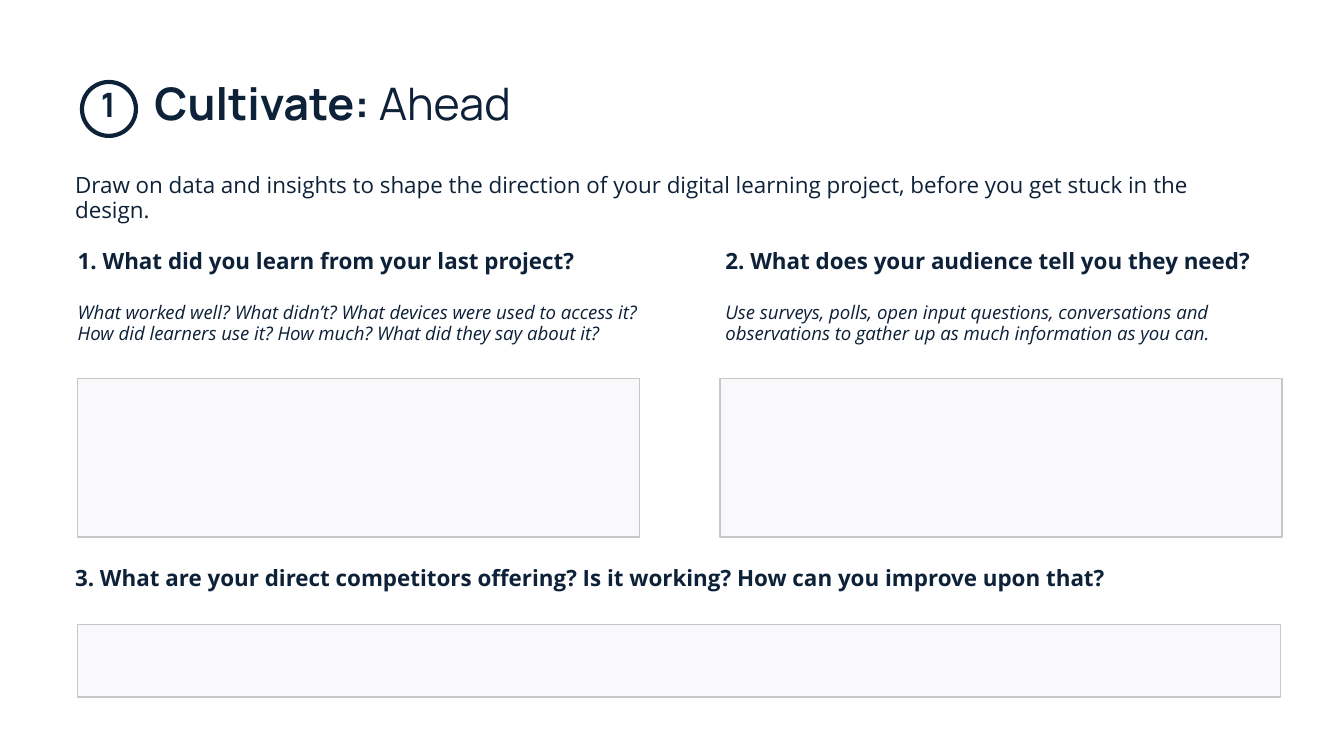
from dataclasses import dataclass

from pptx import Presentation
from pptx.dml.color import RGBColor
from pptx.enum.shapes import MSO_SHAPE
from pptx.enum.text import PP_ALIGN
from pptx.util import Cm, Pt

INK = "0D2139"
PANEL_FILL = "F9F9FB"
PANEL_LINE = "C7C7C7"

TITLE = {"name": "Manrope", "size": Pt(24), "bold": True}
TITLE_LIGHT = {**TITLE, "bold": False}
NUMERAL = {**TITLE, "size": Pt(18)}
BODY = {"name": "Open Sans", "size": Pt(12), "bold": False}
QUESTION = {**BODY, "bold": True}
HINT = {**BODY, "size": Pt(10), "italic": True}


@dataclass
class Box:
    left: float
    top: float
    width: float
    height: float

    def lengths(self) -> list:
        return [Cm(value) for value in (self.left, self.top, self.width, self.height)]


@dataclass
class Run:
    text: str
    font: dict


def color(value: str) -> RGBColor:
    return RGBColor.from_string(value)


def add_text(slide, box: Box, paragraphs: list[list[Run]], alignment=PP_ALIGN.LEFT) -> None:
    frame = slide.shapes.add_textbox(*box.lengths()).text_frame
    frame.word_wrap = True
    for side in ("left", "top", "right", "bottom"):
        setattr(frame, f"margin_{side}", Cm(0.25))
    for index, runs in enumerate(paragraphs):
        paragraph = frame.add_paragraph() if index else frame.paragraphs[0]
        paragraph.alignment = alignment
        paragraph.line_spacing = 0.9
        paragraph.space_before = Pt(16 if index else 0)
        for item in runs:
            run = paragraph.add_run()
            run.text = item.text
            run.font.color.rgb = color(INK)
            for attribute, value in item.font.items():
                setattr(run.font, attribute, value)


def add_outline(slide, kind: MSO_SHAPE, box: Box, line: str, weight: float, fill: str = "") -> None:
    shape = slide.shapes.add_shape(kind, *box.lengths())
    shape.shadow.inherit = False
    shape.line.color.rgb = color(line)
    shape.line.width = Pt(weight)
    if fill:
        shape.fill.solid()
        shape.fill.fore_color.rgb = color(fill)
    else:
        shape.fill.background()


def main() -> None:
    presentation = Presentation()
    presentation.slide_width = Cm(25.4)
    presentation.slide_height = Cm(14.29)
    slide = presentation.slides.add_slide(presentation.slide_layouts[6])

    # Title with numbered circle
    add_text(slide, Box(2.67, 1.3, 15.52, 1.55),
             [[Run("Cultivate: ", TITLE), Run("Ahead", TITLE_LIGHT)]])
    add_outline(slide, MSO_SHAPE.OVAL, Box(1.55, 1.55, 1.02, 1.02), INK, 2.25)
    add_text(slide, Box(1.65, 1.42, 0.79, 1.02), [[Run("1", NUMERAL)]], PP_ALIGN.CENTER)

    # Introduction
    add_text(slide, Box(1.17, 3.05, 23.04, 1.5), [[Run(
        "Draw on data and insights to shape the direction of your digital learning project, "
        "before you get stuck in the design.", BODY)]])

    # Questions 1 and 2
    columns = [
        (1.22, "1. What did you learn from your last project?",
         "What worked well? What didn’t? What devices were used to access it? "
         "How did learners use it? How much? What did they say about it?"),
        (13.46, "2. What does your audience tell you they need?",
         "Use surveys, polls, open input questions, conversations and "
         "observations to gather up as much information as you can."),
    ]
    for left, question, hint in columns:
        add_text(slide, Box(left, 4.47, 11.13, 2.6),
                 [[Run(question, QUESTION)], [Run(hint, HINT)]])

    # Question 3
    add_text(slide, Box(1.17, 10.5, 23.04, 0.95), [[Run(
        "3. What are your direct competitors offering? Is it working? "
        "How can you improve upon that?", QUESTION)]])

    # Answer panels
    panels = [
        Box(1.47, 7.16, 10.62, 2.99),
        Box(13.61, 7.16, 10.62, 2.99),
        Box(1.47, 11.81, 22.73, 1.37),
    ]
    for panel in panels:
        add_outline(slide, MSO_SHAPE.RECTANGLE, panel, PANEL_LINE, 0.75, PANEL_FILL)

    presentation.save("out.pptx")


if __name__ == "__main__":
    main()
